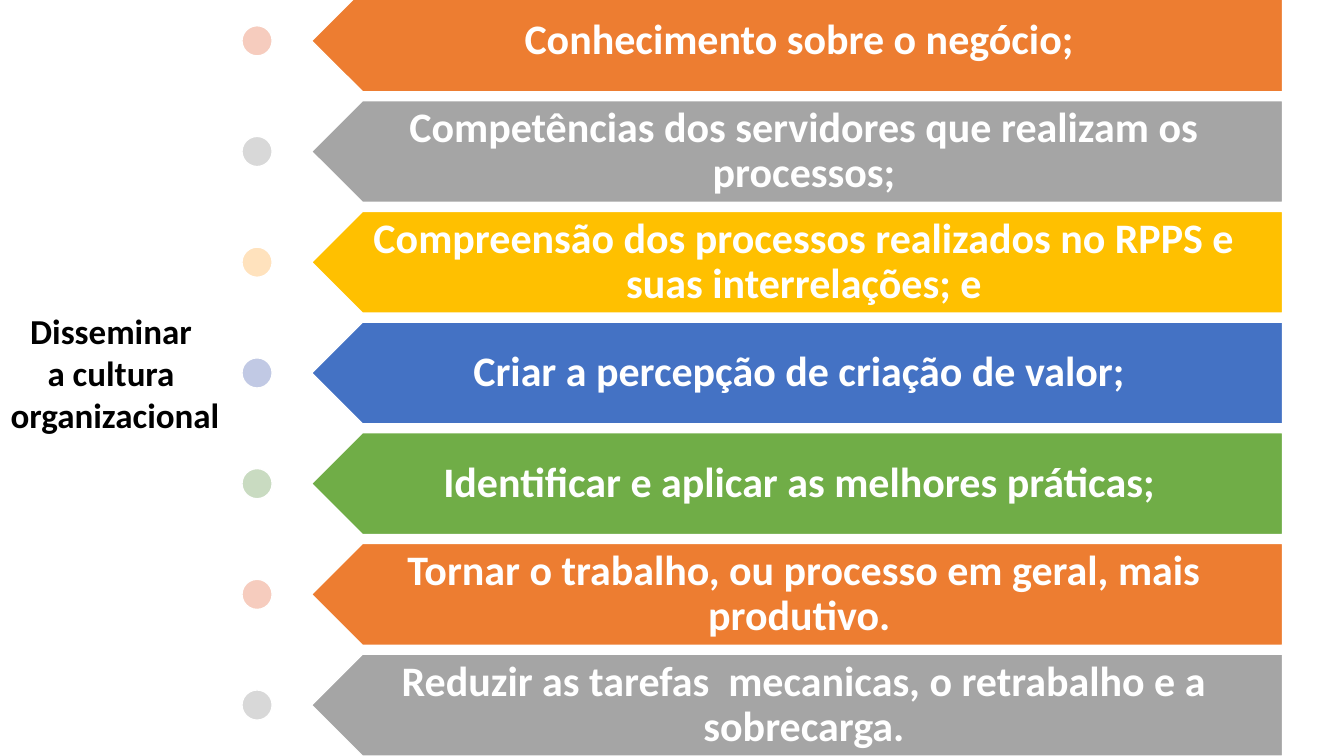
from pptx import Presentation
from pptx.dml.color import RGBColor
from pptx.enum.shapes import MSO_SHAPE
from pptx.enum.text import MSO_ANCHOR, MSO_AUTO_SIZE, PP_ALIGN
from pptx.util import Inches, Pt

PENTAGON, OVAL = MSO_SHAPE.PENTAGON, MSO_SHAPE.OVAL
MIDDLE = MSO_ANCHOR.MIDDLE
CENTER = PP_ALIGN.CENTER
GROW = MSO_AUTO_SIZE.SHAPE_TO_FIT_TEXT

BLACK = RGBColor(0x00, 0x00, 0x00)
WHITE = RGBColor(0xFF, 0xFF, 0xFF)
ORANGE = RGBColor(0xED, 0x7D, 0x31)
GRAY = RGBColor(0xA5, 0xA5, 0xA5)
GOLD = RGBColor(0xFF, 0xC0, 0x00)
BLUE = RGBColor(0x44, 0x72, 0xC4)
GREEN = RGBColor(0x70, 0xAD, 0x47)
PALE_ORANGE = RGBColor(0xF6, 0xCC, 0xBE)
PALE_GRAY = RGBColor(0xD8, 0xD8, 0xD8)
PALE_GOLD = RGBColor(0xFF, 0xE2, 0xBD)
PALE_BLUE = RGBColor(0xC1, 0xC9, 0xE4)
PALE_GREEN = RGBColor(0xC9, 0xDB, 0xC1)

LABEL = ["Disseminar ", "a cultura ", "organizacional"]
ITEMS = [
    ("Conhecimento sobre o negócio; ", ORANGE, PALE_ORANGE),
    ("Competências dos servidores que realizam os processos;", GRAY, PALE_GRAY),
    ("Compreensão dos processos realizados no RPPS e suas interrelações; e", GOLD, PALE_GOLD),
    ("Criar a percepção de criação de valor; ", BLUE, PALE_BLUE),
    ("Identificar e aplicar as melhores práticas; ", GREEN, PALE_GREEN),
    ("Tornar o trabalho, ou processo em geral, mais produtivo. ", ORANGE, PALE_ORANGE),
    ("Reduzir as tarefas  mecanicas, o retrabalho e a sobrecarga.", GRAY, PALE_GRAY),
]
FIRST_TOP, LAST_TOP = -0.1, 6.49
PITCH = (LAST_TOP - FIRST_TOP) / (len(ITEMS) - 1)
BAR_H, DOT = 1.01, 0.3


class SlideBuilder:
    """Holds the text style and the shape collection being filled."""

    def __init__(self, slide):
        self.shapes = slide.shapes
        self.font = {"name": "Calibri", "bold": True}

    def start_group(self):
        self.shapes = self.shapes.add_group_shape().shapes

    def shape(self, kind, x, y, w, h, color, rotation=0):
        sp = self.shapes.add_shape(kind, Inches(x), Inches(y), Inches(w), Inches(h))
        sp.shadow.inherit = False
        sp.rotation = rotation
        sp.fill.solid()
        sp.fill.fore_color.rgb = color
        sp.line.color.rgb = WHITE
        sp.line.width = Pt(1)

    def text(self, x, y, w, h, lines, size, color, frame, line_spacing=None):
        tf = self.shapes.add_textbox(Inches(x), Inches(y), Inches(w), Inches(h)).text_frame
        for name, value in frame.items():
            setattr(tf, name, value)
        for i, line in enumerate(lines):
            p = tf.paragraphs[0] if i == 0 else tf.add_paragraph()
            p.alignment = CENTER
            p.line_spacing = line_spacing
            r = p.add_run()
            r.text = line
            for name, value in {**self.font, "size": Pt(size)}.items():
                setattr(r.font, name, value)
            r.font.color.rgb = color


def main():
    prs = Presentation()
    prs.slide_width, prs.slide_height = Inches(13.33), Inches(7.5)
    s = SlideBuilder(prs.slides.add_slide(prs.slide_layouts[6]))

    s.text(0, 3.02, 2.28, 1.36, LABEL, 25, BLACK, {"word_wrap": False, "auto_size": GROW})

    bar_frame = {
        "word_wrap": True,
        "vertical_anchor": MIDDLE,
        "margin_left": Inches(0.13),
        "margin_top": Inches(0.12),
        "margin_right": Inches(0.23),
        "margin_bottom": Inches(0.12),
    }
    s.start_group()
    for i, (text, color, pale) in enumerate(ITEMS):
        top = FIRST_TOP + i * PITCH
        s.shape(PENTAGON, 3.09, top, 9.63, BAR_H, color, rotation=180)
        s.text(3.34, top, 9.37, BAR_H, [text], 30, WHITE, bar_frame, line_spacing=0.9)
        s.shape(OVAL, 2.4, top + (BAR_H - DOT) / 2, DOT, DOT, pale)

    prs.save("out.pptx")


if __name__ == "__main__":
    main()
